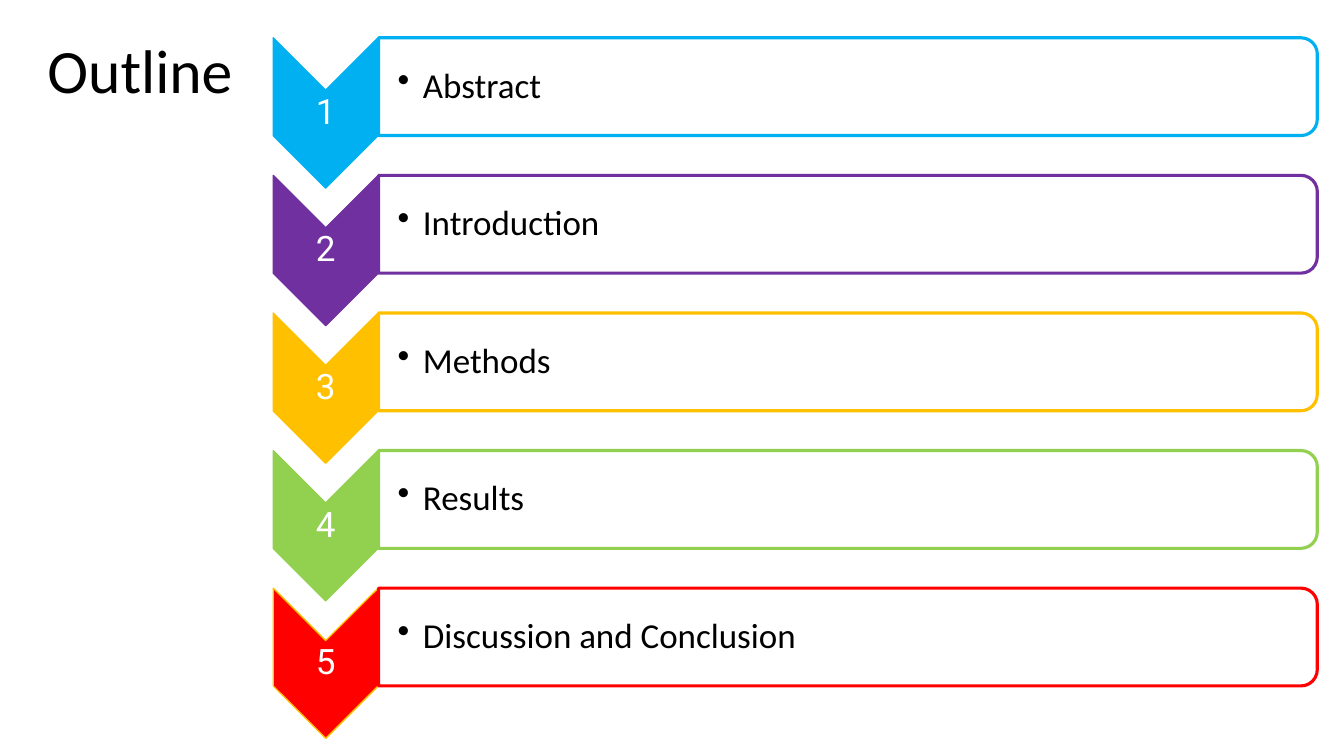
from lxml.etree import SubElement
from pptx import Presentation
from pptx.dml.color import RGBColor
from pptx.enum.shapes import MSO_SHAPE as Shape
from pptx.enum.text import MSO_ANCHOR as Anchor, PP_ALIGN as Align
from pptx.oxml.ns import qn
from pptx.util import Inches, Pt

SLIDE_W, SLIDE_H = 13.33, 7.5

# Grid: one row per section, a marker column and a bar column
ROW_PITCH = 1.365
MARKER_X, MARKER_Y = 3.23, 1.12
MARKER_W, MARKER_H = 1.04, 1.49
BAR_X, BAR_Y = 8.41, 0.86
BAR_W, BAR_H = 9.31, 0.97
LABEL_W, LABEL_H = 9.27, 0.87
PADDING = 0.02

# Section name, fill of the marker, outline of the marker
SECTIONS = [
    ("Abstract", "00B0F0", "00B0F0"),
    ("Introduction", "7030A0", "7030A0"),
    ("Methods", "FFC000", "FFC000"),
    ("Results", "92D050", "92D050"),
    ("Discussion and Conclusion", "FF0000", "FFC000"),
]


def paint(color_format, hex_color):
    color_format.rgb = RGBColor.from_string(hex_color)


def centred(x, y, width, height):
    """Left, top, width and height of a box around its centre."""
    return [Inches(v) for v in (x - width / 2, y - height / 2, width, height)]


def add_turned_shape(group, kind, x, y, width, height, fill, line, weight):
    """Add a shape turned a quarter; width and height are as seen."""
    shape = group.shapes.add_shape(kind, *centred(x, y, height, width))
    shape.rotation = 90
    shape.shadow.inherit = False
    shape.fill.solid()
    paint(shape.fill.fore_color, fill)
    paint(shape.line.color, line)
    shape.line.width = Pt(weight)
    return shape


def set_opacity(shape, percent):
    color = shape.fill._xPr.find(qn("a:solidFill"))[0]
    SubElement(color, qn("a:alpha"), val=str(percent * 1000))


def write(para, text, font, size, color):
    para.line_spacing = 0.9
    span = para.add_run()
    span.text = text
    span.font.name = font
    span.font.size = Pt(size)
    paint(span.font.color, color)


def add_text(group, place, text, font, color, left_padding=PADDING):
    box = group.shapes.add_textbox(*place)
    frame = box.text_frame
    frame.word_wrap = True
    frame.vertical_anchor = Anchor.MIDDLE
    frame.margin_left = Inches(left_padding)
    frame.margin_right = frame.margin_top = frame.margin_bottom = Inches(PADDING)
    para = frame.paragraphs[0]
    write(para, text, font, 25, color)
    return para


def add_bullet(para):
    para.level = 1
    properties = para._p.get_or_add_pPr()
    properties.set("marL", str(Inches(0.25)))
    properties.set("indent", str(-Inches(0.25)))
    SubElement(properties, qn("a:buChar"), char="•")


def add_title(page, text):
    title = page.shapes.title
    title.left, title.top = Inches(0.37), 0
    title.width, title.height = Inches(11.5), Inches(1.45)
    title.text_frame.vertical_anchor = Anchor.MIDDLE
    para = title.text_frame.paragraphs[0]
    para.alignment = Align.LEFT
    write(para, text, "Calibri", 44, "000000")


def add_section(group, row, name, color, outline):
    shift = row * ROW_PITCH

    # Numbered marker
    marker_y = MARKER_Y + shift
    add_turned_shape(group, Shape.CHEVRON, MARKER_X, marker_y,
                     MARKER_W, MARKER_H, color, outline, 1)
    number = add_text(group, centred(MARKER_X, marker_y, MARKER_W, 0.45),
                      str(row + 1), "Roboto", "FFFFFF")
    number.alignment = Align.CENTER

    # Bar with the section name
    bar_y = BAR_Y + shift
    bar = add_turned_shape(group, Shape.ROUND_2_SAME_RECTANGLE, BAR_X, bar_y,
                           BAR_W, BAR_H, "FFFFFF", color, 2.25)
    set_opacity(bar, 90)
    label_x = BAR_X - (BAR_W - LABEL_W) / 2
    label = add_text(group, centred(label_x, bar_y, LABEL_W, LABEL_H),
                     name, "Calibri", "000000", left_padding=0.19)
    add_bullet(label)


def main():
    deck = Presentation()
    deck.slide_width, deck.slide_height = Inches(SLIDE_W), Inches(SLIDE_H)
    page = deck.slides.add_slide(deck.slide_layouts[5])
    add_title(page, "Outline")
    group = page.shapes.add_group_shape()
    for row, section in enumerate(SECTIONS):
        add_section(group, row, *section)
    deck.save("out.pptx")


if __name__ == "__main__":
    main()
